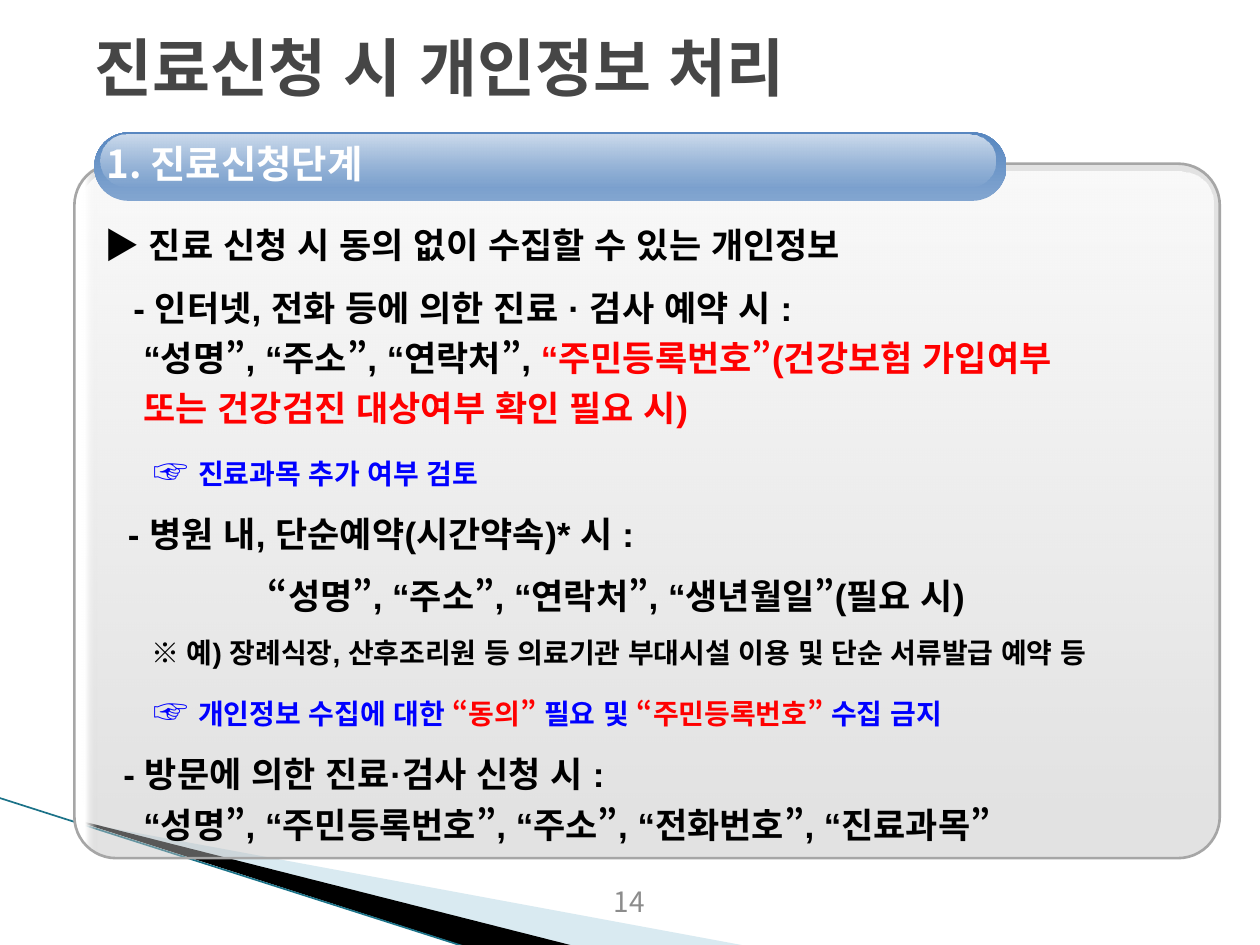
from lxml import etree
from pptx import Presentation
from pptx.dml.color import RGBColor
from pptx.enum import lang, shapes, text
from pptx.oxml import ns
from pptx.util import Cm, Pt

WHITE = RGBColor(0xFF, 0xFF, 0xFF)
BLACK = RGBColor(0, 0, 0)
RED = RGBColor(0xFF, 0, 0)
BLUE = RGBColor(0, 0, 0xFF)
TITLE_GRAY = RGBColor(0x46, 0x46, 0x46)
NUMBER_GRAY = RGBColor(0x8C, 0x8C, 0x8C)
FRAME_GRAY = RGBColor(0xA6, 0xA6, 0xA6)
PANEL_GRAY = RGBColor(0xBF, 0xBF, 0xBF)
BAR_LIGHT = RGBColor(0x82, 0xA5, 0xD0)
BAR_DARK = RGBColor(0x58, 0x87, 0xC0)
PALE_BLUE = RGBColor(0xA0, 0xCB, 0xDC)
TEAL = RGBColor(0x1B, 0x72, 0x88)

KOREAN = "Noto Sans CJK KR"
LATIN = "Arial"
HANGING = 0.79
BREAK = None

# Each paragraph: first-line start and left margin in cm, then runs of
# (words, size, colour), with BREAK for a new line.
BODY = [
    (0, HANGING, [("▶ 진료 신청 시 동의 없이 수집할 수 있는 개인정보", 20, BLACK)]),
    (0.59, HANGING, [
        ("- 인터넷, 전화 등에 의한 진료 · 검사 예약 시 :", 20, BLACK), BREAK,
        ("“성명”, “주소”, “연락처”, ", 20, BLACK),
        ("“주민등록번호”(건강보험 가입여부", 20, RED), BREAK,
        ("또는 건강검진 대상여부 확인 필요 시)", 20, RED)]),
    (0.99, HANGING, [("☞ ", 20, BLUE), ("진료과목 추가 여부 검토", 16, BLUE)]),
    (0.48, HANGING, [("- 병원 내, 단순예약(시간약속)* 시 :", 20, BLACK)]),
    (3.3, 3.3, [("“성명”, “주소”, “연락처”, “생년월일”(필요 시)", 20, BLACK)]),
    (0.95, HANGING, [
        ("※ 예) 장례식장, 산후조리원 등 의료기관 부대시설 이용 및 단순 서류발급 예약 등", 16, BLACK)]),
    (0.99, HANGING, [
        ("☞ ", 20, BLUE), ("개인정보 수집에 대한 ", 16, BLUE), ("“동의” ", 16, RED),
        ("필요 및 ", 16, BLUE), ("“주민등록번호” ", 16, RED), ("수집 금지", 16, BLUE)]),
    (0.39, HANGING, [
        ("- 방문에 의한 진료·검사 신청 시 :", 20, BLACK), BREAK,
        ("“성명”, “주민등록번호”, “주소”, “전화번호”, “진료과목”", 20, BLACK)]),
]


def set_alpha(color_element, percent):
    alpha = etree.SubElement(color_element, ns.qn("a:alpha"))
    alpha.set("val", str(percent * 1000))


def set_gradient(shape, stops, angle):
    """Fill with (position, colour, opacity) stops; angle runs clockwise."""
    shape.fill.gradient()
    gradient = shape._element.spPr.find(ns.qn("a:gradFill"))
    for child in list(gradient):
        gradient.remove(child)
    stop_list = etree.SubElement(gradient, ns.qn("a:gsLst"))
    for position, color, opacity in stops:
        stop = etree.SubElement(stop_list, ns.qn("a:gs"), pos=str(position * 1000))
        set_alpha(etree.SubElement(stop, ns.qn("a:srgbClr"), val=str(color)), opacity)
    etree.SubElement(gradient, ns.qn("a:lin"), ang=str(angle * 60000), scaled="0")


def add_wedge(slide, points, color, opacity=100):
    corners = [(Cm(x), Cm(y)) for x, y in points]
    builder = slide.shapes.build_freeform(*corners[0])
    builder.add_line_segments(corners[1:])
    shape = builder.convert_to_shape()
    shape.shadow.inherit = False
    shape.fill.solid()
    shape.fill.fore_color.rgb = color
    set_alpha(shape._element.spPr.find(ns.qn("a:solidFill"))[0], opacity)
    shape.line.fill.background()


def add_edge_line(slide, start, end):
    line = slide.shapes.add_connector(
        shapes.MSO_CONNECTOR.STRAIGHT, *map(Cm, start + end))
    line.line.color.rgb = TEAL
    line.line.width = Pt(0.95)
    etree.SubElement(line._element.spPr, ns.qn("a:effectLst"))


def add_panel(slide, box, rounding, stops, angle, outline=None):
    shape = slide.shapes.add_shape(
        shapes.MSO_SHAPE.ROUNDED_RECTANGLE, *map(Cm, box))
    shape.adjustments[0] = rounding
    shape.shadow.inherit = False
    set_gradient(shape, stops, angle)
    if outline is None:
        shape.line.fill.background()
    else:
        shape.line.color.rgb = outline
        shape.line.width = Pt(1.5)


def add_text_frame(slide, box, **settings):
    frame = slide.shapes.add_textbox(*map(Cm, box)).text_frame
    frame.word_wrap = True
    for name, value in settings.items():
        setattr(frame, name, value)
    return frame


def add_run(paragraph, words, size, color, bold=True, latin=KOREAN):
    run = paragraph.add_run()
    run.text = words
    formats = {"size": Pt(size), "bold": bold, "name": latin,
               "language_id": lang.MSO_LANGUAGE_ID.KOREAN}
    for name, value in formats.items():
        setattr(run.font, name, value)
    run.font.color.rgb = color
    east_asian = etree.Element(ns.qn("a:ea"), typeface=KOREAN)
    run.font._element.find(ns.qn("a:latin")).addnext(east_asian)


def add_body(slide, box):
    frame = add_text_frame(slide, box)
    for index, (first, left, runs) in enumerate(BODY):
        paragraph = frame.add_paragraph() if index else frame.paragraphs[0]
        formats = {"line_spacing": 1.2, "space_after": Pt(1),
                   "space_before": Pt(6 if index else 0)}
        for name, value in formats.items():
            setattr(paragraph, name, value)
        properties = paragraph._p.get_or_add_pPr()
        properties.set("marL", str(Cm(left)))
        properties.set("indent", str(Cm(first - left)))
        for run in runs:
            if run is BREAK:
                paragraph.add_line_break()
            else:
                add_run(paragraph, *run, latin=LATIN)


def main():
    presentation = Presentation()
    presentation.slide_width, presentation.slide_height = Cm(25.4), Cm(19.05)
    slide = presentation.slides.add_slide(presentation.slide_layouts[6])

    add_wedge(slide, [(1.4, 16.54), (15.11, 19.08), (11.58, 19.08), (1.4, 16.51)],
              PALE_BLUE, 40)
    add_wedge(slide, [(1.6, 16.54), (11.61, 19.08), (9.45, 19.1), (1.62, 16.58)],
              BLACK)
    add_edge_line(slide, (-0.03, 16.08), (9.42, 19.1))

    title = add_text_frame(slide, (1.3, 0.53, 22.86, 1.6), margin_left=Cm(0.6),
                           vertical_anchor=text.MSO_ANCHOR.MIDDLE)
    add_run(title.paragraphs[0], "진료신청 시 개인정보 처리", 36, TITLE_GRAY)

    add_panel(slide, (1.5, 3.3, 23.09, 14), 0.06,
              [(1, WHITE, 100), (2, PANEL_GRAY, 45)], 0, FRAME_GRAY)
    add_panel(slide, (1.65, 3.45, 22.81, 13.18), 0.05,
              [(0, WHITE, 81), (100, WHITE, 0)], 90)
    add_body(slide, (1.85, 4.21, 22.76, 13.08))

    add_panel(slide, (1.9, 2.67, 18.39, 1.38), 0.5,
              [(0, BAR_LIGHT, 100), (100, BAR_DARK, 100)], 270)
    add_panel(slide, (2.03, 2.72, 18.03, 1.04), 0.5,
              [(0, WHITE, 71), (100, WHITE, 0)], 90)
    heading = add_text_frame(slide, (1.9, 2.92, 17.53, 0.97),
                             vertical_anchor=text.MSO_ANCHOR.MIDDLE)
    heading.paragraphs[0].line_spacing = Pt(20)
    add_run(heading.paragraphs[0], "1. 진료신청단계", 22, WHITE)

    number = add_text_frame(slide, (9.73, 17.7, 5.92, 1.02))
    number.paragraphs[0].alignment = text.PP_ALIGN.CENTER
    add_run(number.paragraphs[0], "14", 16, NUMBER_GRAY, bold=False)

    presentation.save("out.pptx")


if __name__ == "__main__":
    main()
